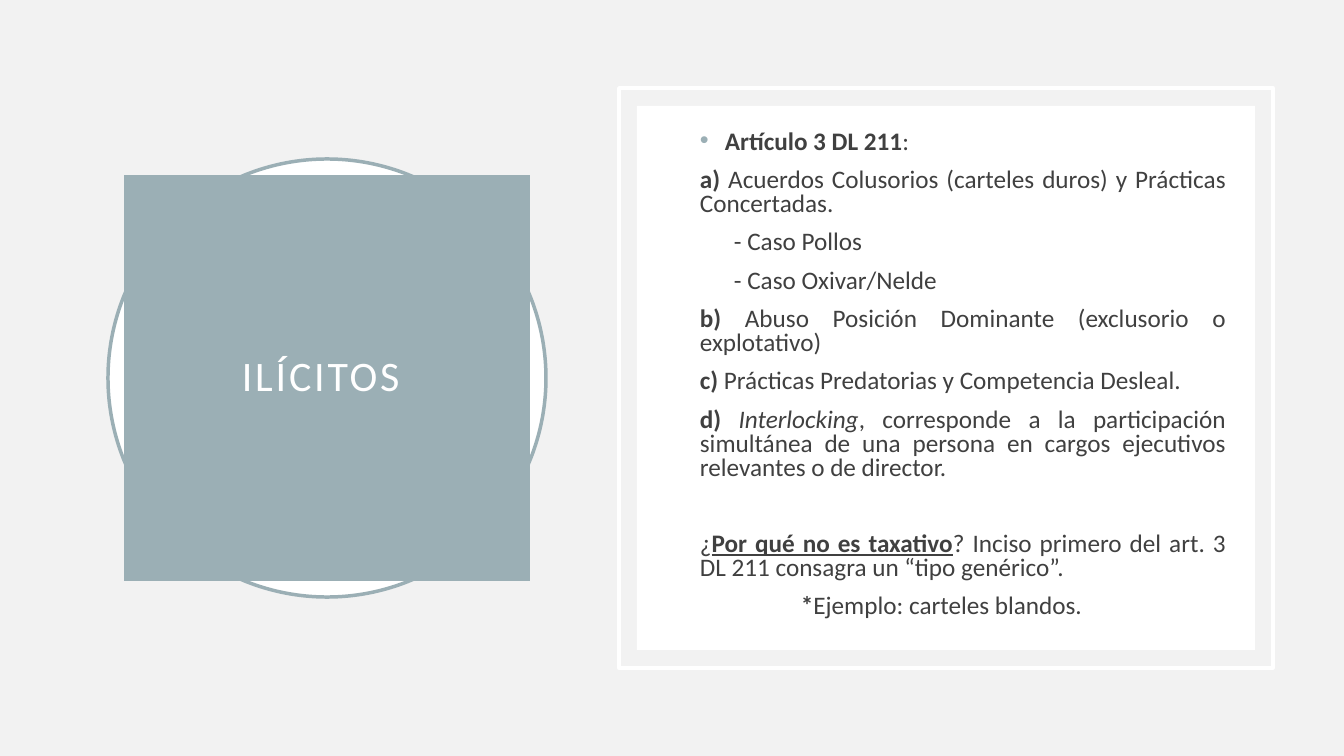
from dataclasses import dataclass

from lxml import etree
from pptx import Presentation
from pptx import util as u
from pptx.dml.color import RGBColor
from pptx.enum import shapes, text
from pptx.oxml.ns import qn

EMU_PER_PX = 914400 / 100.8


@dataclass(frozen=True)
class Theme:
    background: str = "F2F2F2"
    accent: str = "9BAFB5"
    white: str = "FFFFFF"
    ink: str = "404040"
    font: str = "Calibri"
    title_size: int = 30
    body_size: int = 18
    outline: float = 2.5
    body_gap: int = 10
    section_gap: int = 37


THEME = Theme()
CASE_INDENT = 34
EXAMPLE_INDENT = 101

# Each paragraph: its runs as (wording, style letters b/i/u), then its layout.
ARTICLE = [
    ([("Artículo 3 DL 211", "b"), (":", "")], {"bullet": True}),
    ([("a) ", "b"),
      ("Acuerdos Colusorios (carteles duros) y Prácticas Concertadas.", "")], {}),
    ([("- Caso Pollos", "")], {"indent": CASE_INDENT}),
    ([("- Caso Oxivar/Nelde", "")], {"indent": CASE_INDENT}),
    ([("b) ", "b"),
      ("Abuso Posición Dominante (exclusorio o explotativo)", "")], {}),
    ([("c) ", "b"), ("Prácticas Predatorias y Competencia Desleal.", "")], {}),
    ([("d) ", "b"), ("Interlocking", "i"),
      (", corresponde a la participación simultánea de una persona en cargos "
       "ejecutivos relevantes o de director.", "")], {}),
    ([("¿", ""), ("Por qué no es taxativo", "bu"),
      ("? Inciso primero del art. 3 DL 211 consagra un “tipo genérico”.", "")],
     {"gap": THEME.section_gap}),
    ([("*", "b"), ("Ejemplo: carteles blandos.", "")],
     {"indent": EXAMPLE_INDENT}),
]


def px(length):
    return u.Emu(round(length * EMU_PER_PX))


def rgb(value):
    return RGBColor.from_string(value)


def add_panel(slide, kind, box, fill=None, line=None):
    panel = slide.shapes.add_shape(kind, *map(px, box))
    panel.shadow.inherit = False
    if fill:
        panel.fill.solid()
        panel.fill.fore_color.rgb = rgb(fill)
    else:
        panel.fill.background()
    if line:
        panel.line.color.rgb = rgb(line)
        panel.line.width = u.Pt(THEME.outline)
    else:
        panel.line.fill.background()
    return panel


def add_run(paragraph, wording, size, color, style=""):
    run = paragraph.add_run()
    run.text = wording
    font = run.font
    font.name, font.size = THEME.font, u.Pt(size)
    font.color.rgb = rgb(color)
    font.bold, font.italic, font.underline = (letter in style for letter in "biu")
    return run


def add_title(panel, wording):
    frame = panel.text_frame
    frame.word_wrap = True
    frame.vertical_anchor = text.MSO_ANCHOR.MIDDLE
    paragraph = frame.paragraphs[0]
    paragraph.alignment = text.PP_ALIGN.CENTER
    paragraph.line_spacing = 0.9
    title = add_run(paragraph, wording, THEME.title_size, THEME.white)
    title.font._element.set("spc", "200")


def set_indent(paragraph, left, bullet):
    """Set the left margin in px, with a hanging accent bullet if asked."""
    properties = paragraph._p.get_or_add_pPr()
    properties.set("marL", str(px(left)))
    properties.set("indent", str(px(-left if bullet else 0)))
    if bullet:
        color = etree.SubElement(properties, qn("a:buClr"))
        etree.SubElement(color, qn("a:srgbClr"), val=THEME.accent)
        etree.SubElement(properties, qn("a:buFont"), typeface="Arial")
        etree.SubElement(properties, qn("a:buChar"), char="•")


def fill_paragraph(paragraph, runs, bullet=False, indent=0, gap=THEME.body_gap):
    align = text.PP_ALIGN.LEFT if bullet else text.PP_ALIGN.JUSTIFY
    paragraph.alignment = align
    paragraph.line_spacing = 0.8
    paragraph.space_before = u.Pt(gap)
    set_indent(paragraph, 25 if bullet else indent, bullet)
    for wording, style in runs:
        add_run(paragraph, wording, THEME.body_size, THEME.ink, style)


def add_article(slide, box, paragraphs):
    frame = slide.shapes.add_textbox(*map(px, box)).text_frame
    frame.word_wrap = True
    frame.vertical_anchor = text.MSO_ANCHOR.TOP
    for number, (runs, layout) in enumerate(paragraphs):
        paragraph = frame.add_paragraph() if number else frame.paragraphs[0]
        fill_paragraph(paragraph, runs, **layout)


def main():
    deck = Presentation()
    deck.slide_width, deck.slide_height = px(1344), px(756)
    slide = deck.slides.add_slide(deck.slide_layouts[6])
    slide.background.fill.solid()
    slide.background.fill.fore_color.rgb = rgb(THEME.background)

    oval, rectangle = shapes.MSO_SHAPE.OVAL, shapes.MSO_SHAPE.RECTANGLE
    add_panel(slide, oval, (108, 159, 438, 438), THEME.white, THEME.accent)
    heading = add_panel(slide, rectangle, (124, 175, 406, 406), THEME.accent)
    add_title(heading, "ILÍCITOS ")
    add_panel(slide, rectangle, (619, 88, 654, 580), line=THEME.white)
    add_panel(slide, rectangle, (637, 106, 618, 544), THEME.white)
    add_article(slide, (690, 126, 546, 524), ARTICLE)
    deck.save("out.pptx")


if __name__ == "__main__":
    main()
